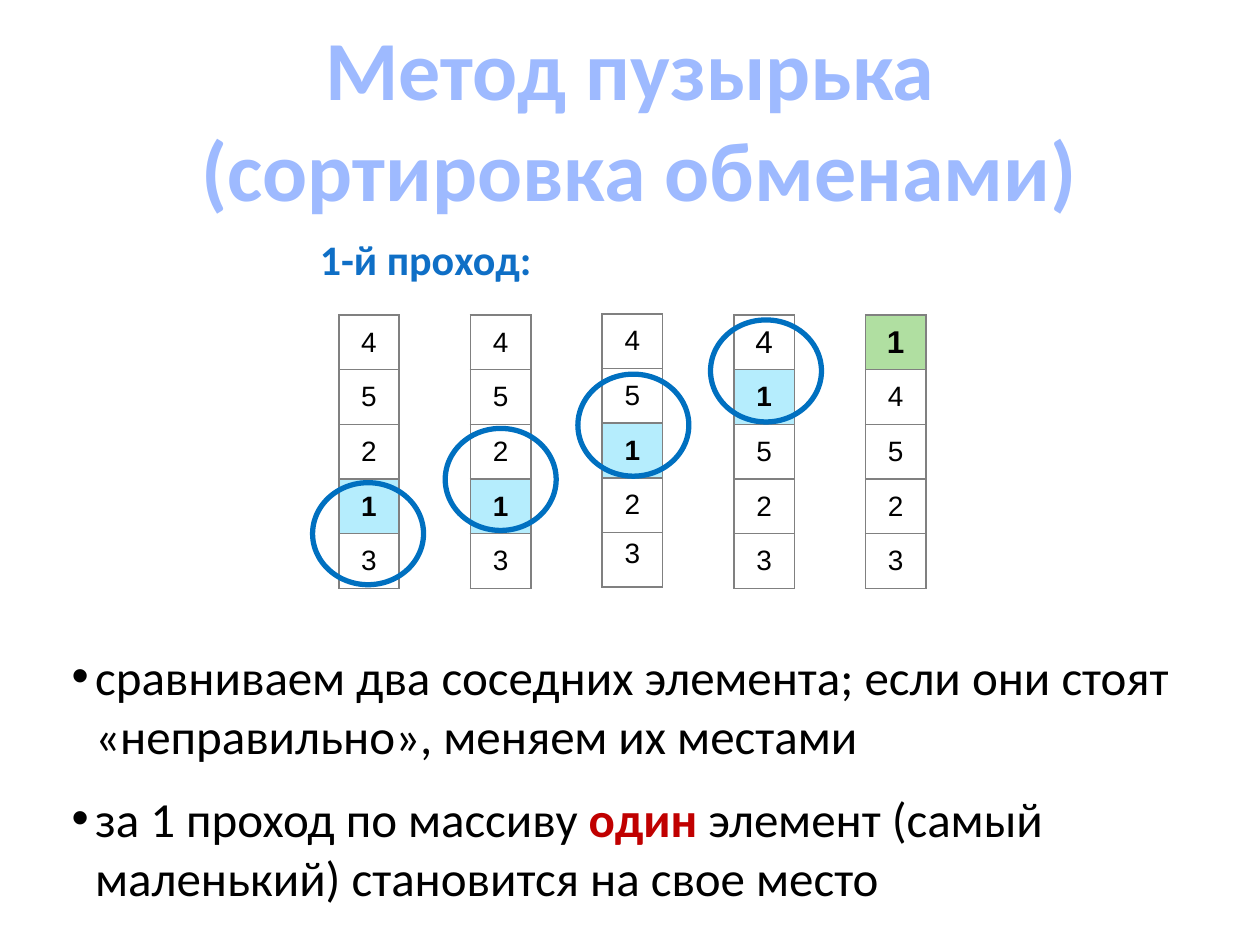
from typing import NamedTuple

from lxml.etree import SubElement
from pptx import Presentation
from pptx.dml.color import RGBColor
from pptx.enum.shapes import MSO_SHAPE
from pptx.enum.text import MSO_ANCHOR, PP_ALIGN
from pptx.oxml.ns import qn
from pptx.util import Pt

BLACK = RGBColor(0x00, 0x00, 0x00)
GRAY = RGBColor(0x80, 0x80, 0x80)
PALE = RGBColor(0x9E, 0xBA, 0xFF)
BLUE = RGBColor(0x0F, 0x6F, 0xC6)
RING = RGBColor(0x00, 0x70, 0xC0)
RED = RGBColor(0xC0, 0x00, 0x00)
CYAN = RGBColor(0xB5, 0xED, 0xFD)
GREEN = RGBColor(0xB0, 0xDF, 0xA1)

LEFT, TOP, STEP = 193.6, 180, 75.25
WIDTH, ROW = 34.5, 31.25
RING_W, RING_H = 63.4, 58.3


class Stage(NamedTuple):
    """State of the array, with its marked row."""
    items: str
    mark: int
    fill: RGBColor = CYAN
    head: float = 16
    lift: float = 0
    last: MSO_ANCHOR = MSO_ANCHOR.MIDDLE


STAGES = [
    Stage("45213", 3),
    Stage("45213", 3),
    Stage("45123", 2, lift=0.7, last=MSO_ANCHOR.TOP),
    Stage("41523", 1, head=18),
    Stage("14523", 0, fill=GREEN, head=18),
]


def style(run, size: float, color: RGBColor, bold: bool = False,
          face: str = "Calibri") -> None:
    font = run.font
    font.name, font.size, font.bold = face, Pt(size), bold
    font.color.rgb = color


def add_box(slide, x: float, y: float, w: float, h: float,
            wrap: bool = True, anchor=MSO_ANCHOR.MIDDLE):
    frame = slide.shapes.add_textbox(Pt(x), Pt(y), Pt(w), Pt(h)).text_frame
    frame.word_wrap = wrap
    frame.vertical_anchor = anchor
    return frame


def add_edge(cell) -> None:
    props = cell._tc.get_or_add_tcPr()
    for side in ("lnL", "lnR", "lnT", "lnB"):
        line = SubElement(props, qn(f"a:{side}"), w=str(Pt(1)))
        fill = SubElement(line, qn("a:solidFill"))
        SubElement(fill, qn("a:srgbClr"), val=str(GRAY))


def add_stage(slide, stage: Stage, x: float) -> None:
    count = len(stage.items)
    table = slide.shapes.add_table(count, 1, Pt(x), Pt(TOP - stage.lift),
                                   Pt(WIDTH), Pt(ROW * count)).table
    table.first_row = table.horz_banding = False
    for i, item in enumerate(stage.items):
        table.rows[i].height = Pt(ROW)
        cell = table.cell(i, 0)
        add_edge(cell)
        if i == stage.mark:
            cell.fill.solid()
            cell.fill.fore_color.rgb = stage.fill
        else:
            cell.fill.background()
        cell.vertical_anchor = stage.last if i == count - 1 else MSO_ANCHOR.MIDDLE
        cell.text_frame.text = item
        para = cell.text_frame.paragraphs[0]
        para.alignment = PP_ALIGN.CENTER
        style(para.runs[0], 16 if i else stage.head, BLACK, i == stage.mark, "Arial")


def add_ring(slide, x: float, y: float) -> None:
    ring = slide.shapes.add_shape(MSO_SHAPE.OVAL, Pt(x), Pt(y),
                                  Pt(RING_W), Pt(RING_H))
    ring.shadow.inherit = False
    ring.fill.background()
    ring.line.color.rgb = RING
    ring.line.width = Pt(3)


def add_point(para, parts: list[str], key: str = "") -> None:
    props = para._p.get_or_add_pPr()
    props.set("marL", str(Pt(13.5)))
    props.set("indent", str(-Pt(13.5)))
    SubElement(props, qn("a:buFont"), typeface="Arial")
    SubElement(props, qn("a:buChar"), char="•")
    for part in parts:
        run = para.add_run()
        run.text = part
        style(run, 28, RED if part == key else BLACK, part == key)


def main() -> None:
    deck = Presentation()
    deck.slide_width, deck.slide_height = Pt(720), Pt(540)
    slide = deck.slides.add_slide(deck.slide_layouts[6])

    # Title
    para = add_box(slide, 0, 16.5, 720, 101.5).paragraphs[0]
    para.text = "Метод пузырька\n (сортировка обменами)"
    para.alignment = PP_ALIGN.CENTER
    for run in para.runs:
        style(run, 48, PALE, True)

    # Heading of the pass
    para = add_box(slide, 175.7, 129.6, 184.3, 36, wrap=False).paragraphs[0]
    para.text = "1-й проход:"
    style(para.runs[0], 24, BLUE, True)

    # Array after each swap
    for i, stage in enumerate(STAGES):
        add_stage(slide, stage, LEFT + STEP * i)

    # Rings round the compared pairs, one row higher each time
    for i in range(len(STAGES) - 1):
        add_ring(slide, 178.6 + 75.8 * i, 275.8 - 31 * i)

    # Rules of the method
    frame = add_box(slide, 33.8, 365.8, 663.8, 159.8, anchor=MSO_ANCHOR.TOP)
    add_point(frame.paragraphs[0], [
        "сравниваем два соседних элемента; если они стоят "
        "«неправильно», меняем их местами"])
    para = frame.add_paragraph()
    para.space_before = Pt(14)
    add_point(para, ["за 1 проход по массиву ", "один",
                     " элемент (самый маленький) становится на свое место"],
              key="один")

    deck.save("out.pptx")


if __name__ == "__main__":
    main()
